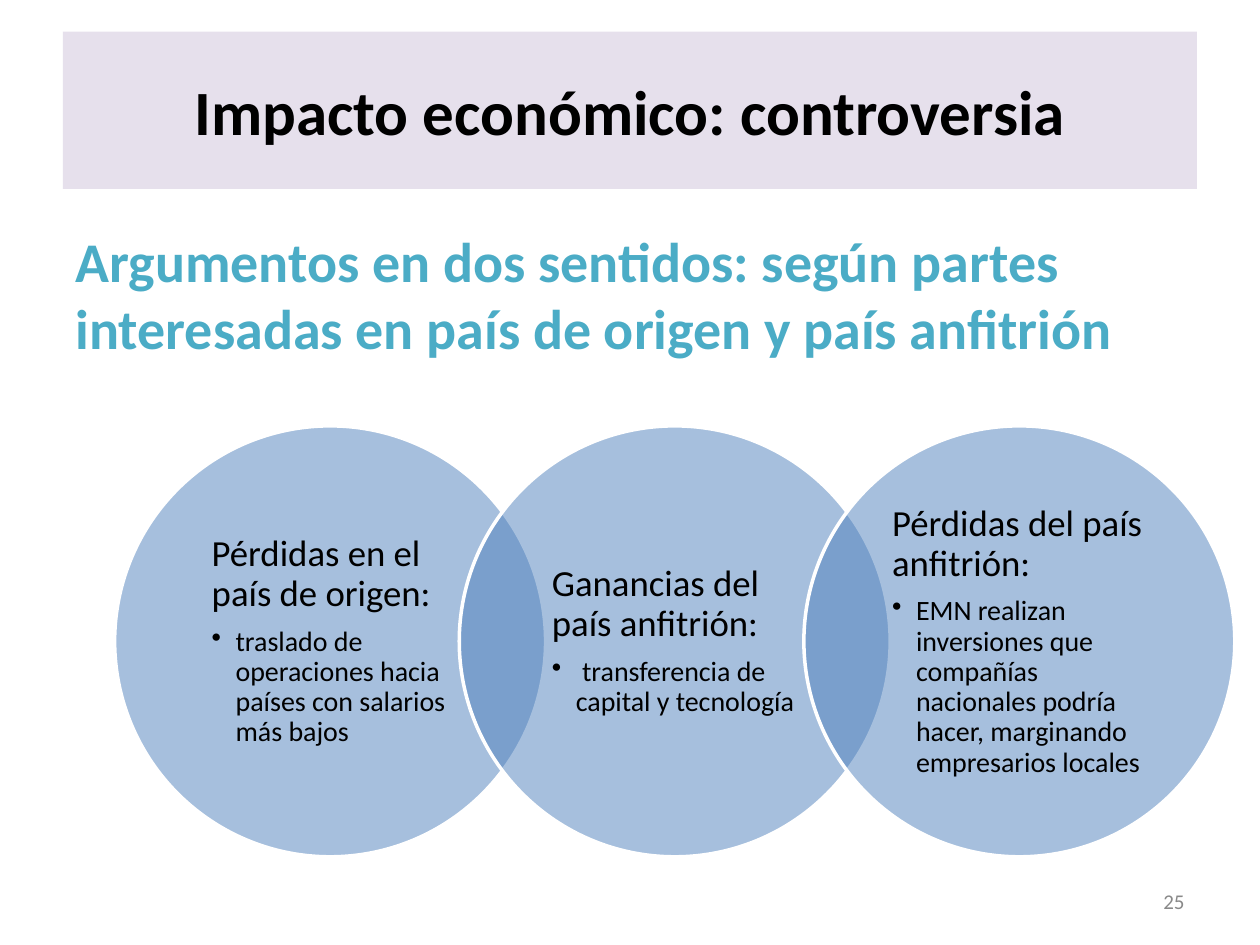
from pptx import Presentation
from pptx.dml.color import RGBColor
from pptx.enum.shapes import MSO_SHAPE as SHAPE
from pptx.enum.text import MSO_ANCHOR as ANCHOR, PP_ALIGN as ALIGN
from pptx.oxml.ns import qn
from pptx.util import Inches, Pt
from lxml import etree


def rgb(value):
    return RGBColor.from_string(value)


def add_run(p, text, size, color="000000", bold=False):
    r = p.add_run()
    r.text = text
    r.font.name = "Calibri"
    r.font.size = Pt(size)
    r.font.bold = bold
    r.font.color.rgb = rgb(color)


prs = Presentation()
prs.slide_width, prs.slide_height = Inches(10), Inches(7.5)
s = prs.slides.add_slide(prs.slide_layouts[6])

sp = s.shapes.add_textbox(Inches(0.5), Inches(1.75), Inches(8.67), Inches(1.25))
tf = sp.text_frame
tf.word_wrap = True
add_run(tf.paragraphs[0],
        "Argumentos en dos sentidos: según partes interesadas en país de origen y país anfitrión",
        32, "4BACC6", True)

sp = s.shapes.add_textbox(Inches(7.17), Inches(6.95), Inches(2.33), Inches(0.4))
tf = sp.text_frame
tf.word_wrap = True
tf.vertical_anchor = ANCHOR.MIDDLE
p = tf.paragraphs[0]
p.alignment = ALIGN.RIGHT
add_run(p, "25", 12, "898989")

sp = s.shapes.add_shape(SHAPE.RECTANGLE, Inches(0.5), Inches(0.25), Inches(9), Inches(1.25))
sp.shadow.inherit = False
sp.fill.solid()
sp.fill.fore_color.rgb = rgb("E6E0EC")
sp.line.fill.background()
tf = sp.text_frame
tf.word_wrap = True
tf.vertical_anchor = ANCHOR.MIDDLE
p = tf.paragraphs[0]
p.alignment = ALIGN.CENTER
add_run(p, "Impacto económico: controversia", 36, bold=True)

circles = [
    ("Pérdidas en el país de origen:",
     "traslado de operaciones hacia países con salarios más bajos"),
    ("Ganancias del país anfitrión:",
     " transferencia de capital y tecnología"),
    ("Pérdidas del país anfitrión:",
     "EMN realizan inversiones que compañías nacionales podría hacer, marginando empresarios locales"),
]
for i, (heading, detail) in enumerate(circles):
    sp = s.shapes.add_shape(SHAPE.OVAL, Inches(0.91 + 2.735 * i), Inches(3.38),
                            Inches(3.42), Inches(3.42))
    sp.shadow.inherit = False
    sp.fill.solid()
    sp.fill.fore_color.rgb = rgb("4F81BD")
    clr = sp.fill._xPr.find(qn("a:solidFill"))[0]
    etree.SubElement(clr, qn("a:alpha")).set("val", "50000")
    sp.line.color.rgb = rgb("FFFFFF")
    sp.line.width = Pt(2)

    sp = s.shapes.add_textbox(Inches(1.49 + 2.7 * i), Inches(3.88), Inches(2.42), Inches(2.42))
    tf = sp.text_frame
    tf.word_wrap = True
    tf.vertical_anchor = ANCHOR.MIDDLE
    tf.margin_left = tf.margin_right = Inches(0.19)
    tf.margin_top = tf.margin_bottom = Inches(0.03)
    p = tf.paragraphs[0]
    p.line_spacing = 0.9
    p.space_after = Pt(7.35)
    add_run(p, heading, 21)
    p = tf.add_paragraph()
    p.level = 1
    p.line_spacing = 0.9
    p.space_after = Pt(2.4)
    add_run(p, detail, 16)
    pPr = p._p.get_or_add_pPr()
    pPr.set("marL", str(Inches(0.19)))
    pPr.set("indent", str(-Inches(0.19)))
    etree.SubElement(pPr, qn("a:buChar")).set("char", "•")

prs.save("out.pptx")
